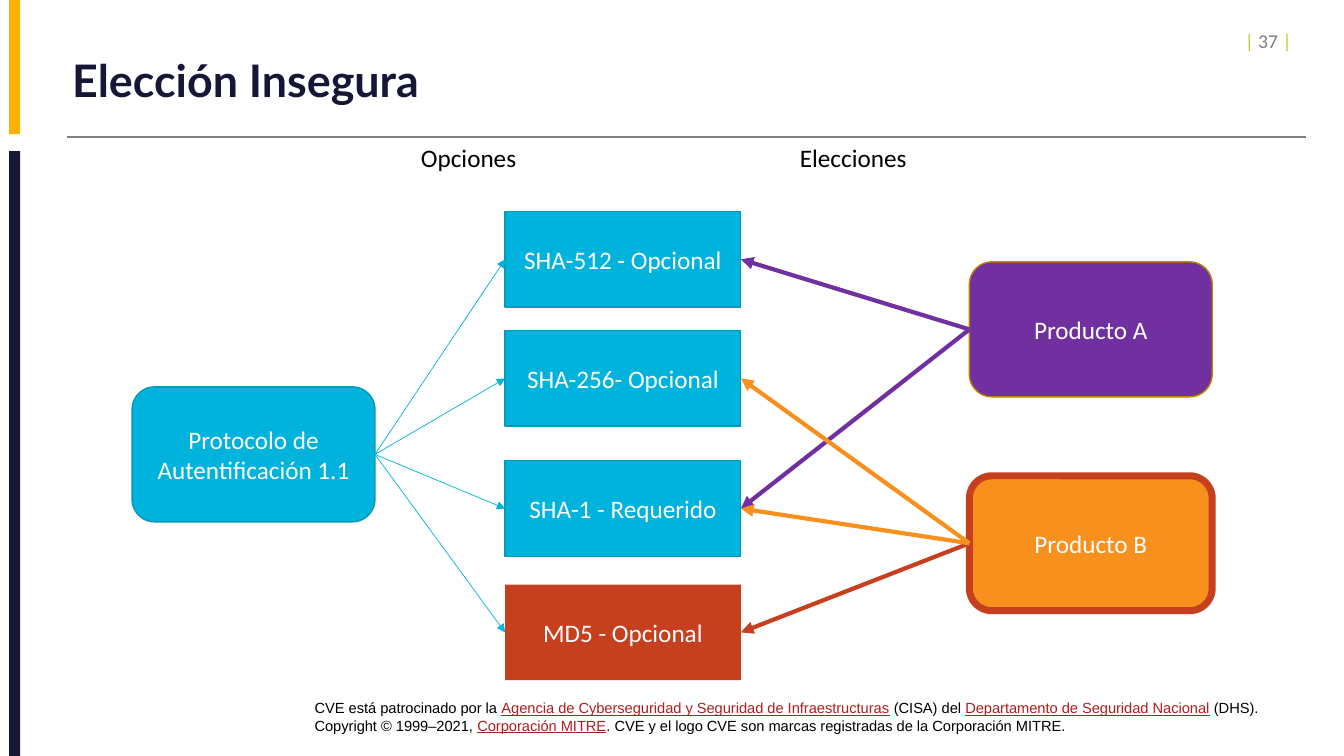
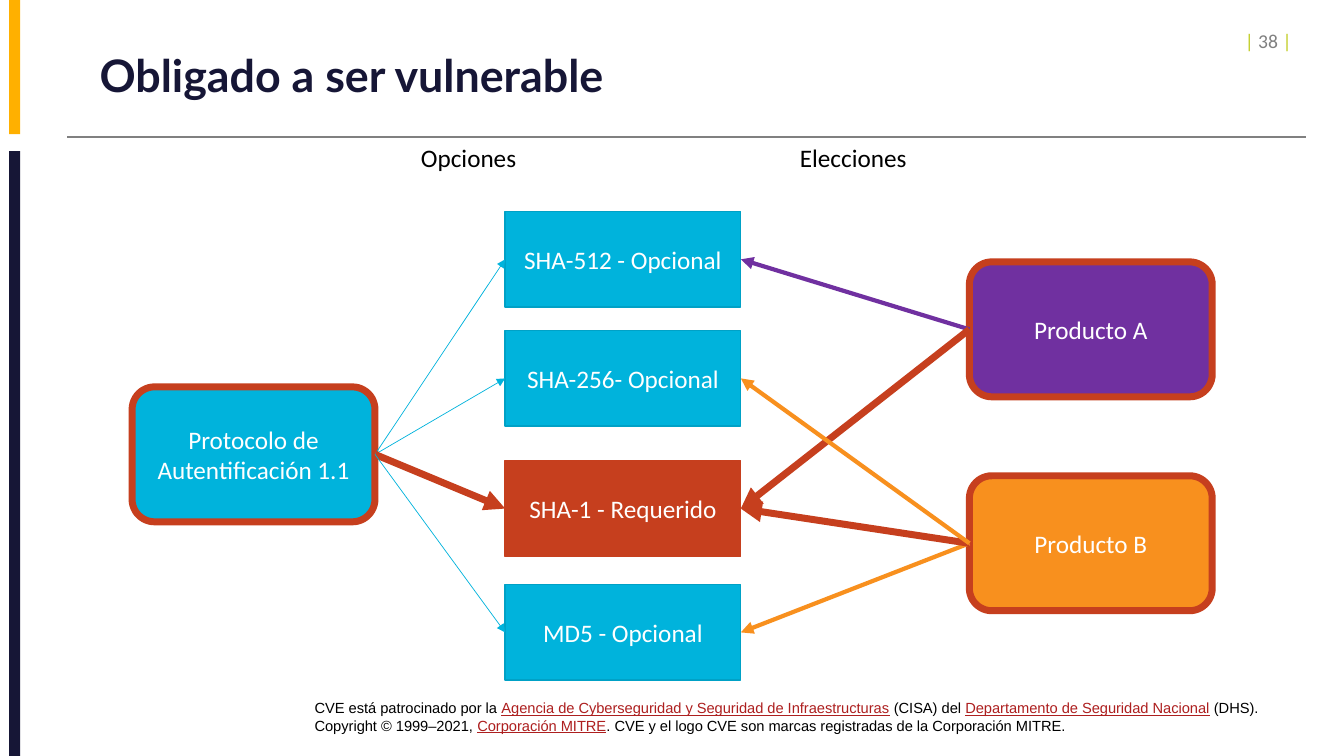
"""Builds two slides on how optional algorithms lead products to an insecure choice."""

from pptx import Presentation
from pptx.dml.color import RGBColor
from pptx.enum.shapes import MSO_CONNECTOR, MSO_SHAPE
from pptx.enum.text import MSO_ANCHOR, MSO_AUTO_SIZE, PP_ALIGN
from pptx.oxml.xmlchemy import OxmlElement
from pptx.util import Cm, Pt

RECTANGLE, ROUNDED = MSO_SHAPE.RECTANGLE, MSO_SHAPE.ROUNDED_RECTANGLE
STRAIGHT = MSO_CONNECTOR.STRAIGHT
TOP, MIDDLE = MSO_ANCHOR.TOP, MSO_ANCHOR.MIDDLE
LEFT, CENTER = PP_ALIGN.LEFT, PP_ALIGN.CENTER
GROW = MSO_AUTO_SIZE.SHAPE_TO_FIT_TEXT
LEFT_SIDE, RIGHT_SIDE = 1, 3

BLACK = RGBColor(0x00, 0x00, 0x00)
WHITE = RGBColor(0xFF, 0xFF, 0xFF)
GRAY = RGBColor(0x80, 0x80, 0x80)
NAVY = RGBColor(0x16, 0x16, 0x36)
AMBER = RGBColor(0xFF, 0xB0, 0x00)
LIME = RGBColor(0xC1, 0xCD, 0x23)
LINK_RED = RGBColor(0xAD, 0x1F, 0x1F)
CYAN = RGBColor(0x00, 0xB3, 0xDC)
TEAL = RGBColor(0x06, 0x98, 0xB8)
DARK_CYAN = RGBColor(0x00, 0xA1, 0xC6)
PURPLE = RGBColor(0x70, 0x30, 0xA0)
GOLD = RGBColor(0xBD, 0x82, 0x00)
ORANGE = RGBColor(0xF8, 0x90, 0x1E)
RED = RGBColor(0xC6, 0x3F, 0x1E)

BANDS = [(0, 3.38, AMBER), (3.81, 15.24, NAVY)]
FOOTER = [
    ("CVE está patrocinado por la ", BLACK),
    ("Agencia de Cyberseguridad y Seguridad de Infraestructuras", LINK_RED),
    (" (CISA) del ", BLACK),
    ("Departamento de Seguridad Nacional", LINK_RED),
    (" (DHS). Copyright © 1999–2021, ", BLACK),
    ("Corporación MITRE", LINK_RED),
    (". CVE y el logo CVE son marcas registradas de la Corporación MITRE.", BLACK),
]
LABELS = [("Opciones", 10.36, 2.95), ("Elecciones", 19.91, 3.23)]
ROUNDED_SIZE = (6.12, 3.4)
OPTION_SIZE = (5.94, 2.41)
NODES = {
    "Protocolo de Autentificación 1.1": (ROUNDED, 3.33, 9.75, *ROUNDED_SIZE),
    "Producto A": (ROUNDED, 24.43, 6.6, *ROUNDED_SIZE),
    "Producto B": (ROUNDED, 24.43, 11.99, *ROUNDED_SIZE),
    "SHA-512 - Opcional": (RECTANGLE, 12.73, 5.33, *OPTION_SIZE),
    "SHA-256- Opcional": (RECTANGLE, 12.73, 8.33, *OPTION_SIZE),
    "SHA-1 - Requerido": (RECTANGLE, 12.73, 11.61, *OPTION_SIZE),
    "MD5 - Opcional": (RECTANGLE, 12.73, 14.73, *OPTION_SIZE),
}
PROTOCOL, PRODUCT_A, PRODUCT_B, SHA_512, SHA_256, SHA_1, MD5 = NODES
ARROWS = [
    (PROTOCOL, SHA_512), (PROTOCOL, SHA_256), (PROTOCOL, SHA_1), (PROTOCOL, MD5),
    (PRODUCT_A, SHA_512), (PRODUCT_A, SHA_1),
    (PRODUCT_B, MD5), (PRODUCT_B, SHA_1), (PRODUCT_B, SHA_256),
]
FILLS = {PROTOCOL: CYAN, PRODUCT_A: PURPLE, PRODUCT_B: ORANGE}
ARROW_WIDTHS = {PROTOCOL: 0.5, PRODUCT_A: 3, PRODUCT_B: 3}

SLIDES = [
    {
        "title": "Elección Insegura", "title_at": (1.57, 0.89), "number": 37,
        "weak_option": MD5, "weak_outline": None, "option_outline": TEAL,
        "outlines": {PROTOCOL: (TEAL, 1), PRODUCT_A: (GOLD, 1), PRODUCT_B: (RED, 5)},
        "risky_arrows": {(PRODUCT_B, MD5)}, "risky_width": 3,
    },
    {
        "title": "Obligado a ser vulnerable", "title_at": (2.26, 0.76), "number": 38,
        "weak_option": SHA_1, "weak_outline": RED, "option_outline": DARK_CYAN,
        "outlines": dict.fromkeys((PROTOCOL, PRODUCT_A, PRODUCT_B), (RED, 5)),
        "risky_arrows": {(PROTOCOL, SHA_1), (PRODUCT_A, SHA_1), (PRODUCT_B, SHA_1)},
        "risky_width": 5,
    },
]


def write(shape, spans, size=18, font="Calibri", bold=False, align=LEFT,
          anchor=TOP, wrap=True, spacing=1.0):
    """Fills a shape with one paragraph of (text, colour) spans."""
    frame = shape.text_frame
    frame.word_wrap = wrap
    frame.vertical_anchor = anchor
    para = frame.paragraphs[0]
    para.alignment = align
    para.line_spacing = spacing
    for text, color in spans:
        span = para.add_run()
        span.text = text
        span.font.name = font
        span.font.size = Pt(size)
        span.font.bold = bold
        span.font.underline = color == LINK_RED
        span.font.color.rgb = color
    return frame


def style_line(connector, color, width, arrow=False):
    """Colours a connector, drops its shadow and may add an arrowhead."""
    connector.line.color.rgb = color
    connector.line.width = Pt(width)
    if arrow:
        tail = OxmlElement("a:tailEnd")
        tail.set("type", "triangle")
        connector.line._get_or_add_ln().append(tail)
    connector._element.spPr.append(OxmlElement("a:effectLst"))


deck = Presentation()
deck.slide_width, deck.slide_height = Cm(33.87), Cm(19.05)

for content in SLIDES:
    page = deck.slides.add_slide(deck.slide_layouts[6])
    shapes = page.shapes

    for top, height, color in BANDS:
        band = shapes.add_shape(RECTANGLE, Cm(0.23), Cm(top), Cm(0.28), Cm(height))
        band.shadow.inherit = False
        band.fill.solid()
        band.fill.fore_color.rgb = color
        band.line.fill.background()

    rule = shapes.add_connector(STRAIGHT, Cm(1.7), Cm(3.45), Cm(32.92), Cm(3.45))
    style_line(rule, GRAY, 1)

    footer = shapes.add_textbox(Cm(7.8), Cm(17.48), Cm(24.38), Cm(1.14))
    frame = write(footer, FOOTER, size=10.5, font="Arial")
    frame.margin_left = frame.margin_right = Cm(0.13)
    frame.margin_top = frame.margin_bottom = Cm(0.13)
    frame.auto_size = GROW

    left, top = content["title_at"]
    title = shapes.add_textbox(Cm(left), Cm(top), Cm(25.91), Cm(2.41))
    write(title, [(content["title"], NAVY)], size=32, font="Lato", bold=True,
          anchor=MIDDLE, spacing=0.9)

    boxes = {}
    for name, (kind, left, top, width, height) in NODES.items():
        fill = FILLS.get(name, CYAN)
        outline, thickness = content["outlines"].get(name, (content["option_outline"], 1))
        if name == content["weak_option"]:
            fill, outline = RED, content["weak_outline"]
        box = shapes.add_shape(kind, Cm(left), Cm(top), Cm(width), Cm(height))
        box.shadow.inherit = False
        box.fill.solid()
        box.fill.fore_color.rgb = fill
        if outline is None:
            box.line.fill.background()
        else:
            box.line.color.rgb = outline
            box.line.width = Pt(thickness)
        write(box, [(name, WHITE)], align=CENTER, anchor=MIDDLE)
        boxes[name] = box

    for source, target in ARROWS:
        color, width = FILLS[source], ARROW_WIDTHS[source]
        if (source, target) in content["risky_arrows"]:
            color, width = RED, content["risky_width"]
        sides = (RIGHT_SIDE, LEFT_SIDE) if source == PROTOCOL else (LEFT_SIDE, RIGHT_SIDE)
        arrow = shapes.add_connector(STRAIGHT, 0, 0, 0, 0)
        arrow.begin_connect(boxes[source], sides[0])
        arrow.end_connect(boxes[target], sides[1])
        style_line(arrow, color, width, arrow=True)

    for text, left, width in LABELS:
        label = shapes.add_textbox(Cm(left), Cm(3.45), Cm(width), Cm(1.02))
        write(label, [(text, BLACK)], wrap=False).auto_size = GROW

    number = shapes.add_textbox(Cm(31.12), Cm(0.61), Cm(1.83), Cm(0.94))
    write(number, [("| ", LIME), (f"{content['number']} ", GRAY), ("|", LIME)], size=14)

deck.save("out.pptx")
